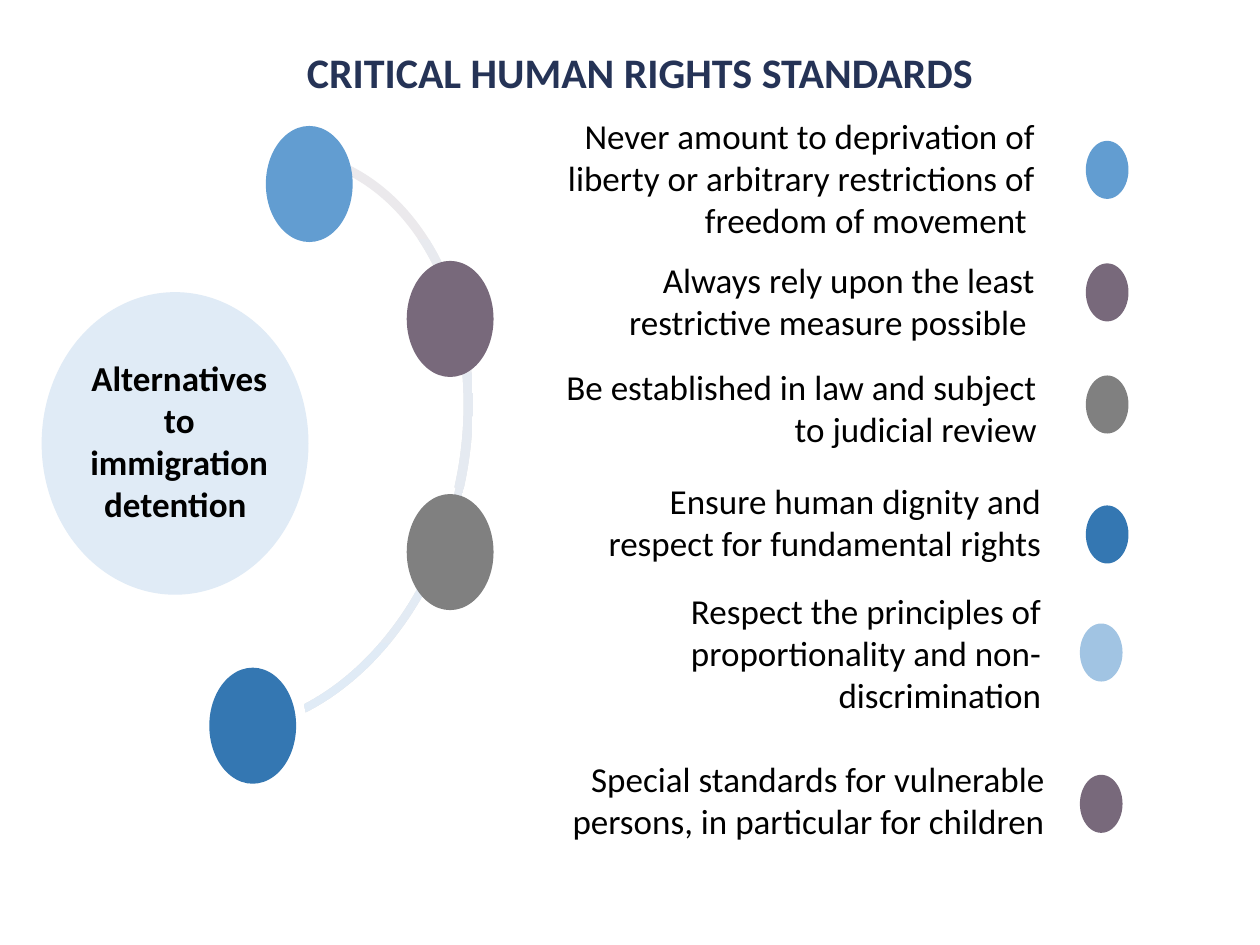
"""Build the slide on human rights standards for alternatives to detention."""
from pptx import Presentation
from pptx.dml.color import RGBColor
from pptx.enum.shapes import MSO_SHAPE
from pptx.enum.text import MSO_AUTO_SIZE, PP_ALIGN
from pptx.oxml.ns import qn
from pptx.util import Cm, Pt

SKY = RGBColor(0x62, 0x9D, 0xD1)
PLUM = RGBColor(0x78, 0x69, 0x7B)
GREY = RGBColor(0x80, 0x80, 0x80)
BLUE = RGBColor(0x34, 0x77, 0xB2)
PALE = RGBColor(0xA1, 0xC4, 0xE3)
ICE = RGBColor(0xE0, 0xEB, 0xF6)
MIST = RGBColor(0xEB, 0xE9, 0xEC)
NAVY = RGBColor(0x25, 0x33, 0x56)
BLACK = RGBColor(0, 0, 0)

BODY = {"name": "Calibri", "size": Pt(20), "bold": False}
STRONG = {**BODY, "bold": True}
TITLE = {**STRONG, "size": Pt(24)}

ARC = (-0.99, 4.42, 11.94, 8.94)
ARCS = [(108, 162, 0.021), (162, 201.12, 0.018)]
NODES = [(5.36, 2.54, SKY), (8.2, 5.26, PLUM), (8.2, 9.96, GREY), (4.22, 13.46, BLUE)]
RULES = [
    ("Never amount to deprivation of liberty or arbitrary restrictions of freedom of movement ",
     (11.05, 2.18, 10.06, 2.82), (21.89, 2.84), SKY),
    ("Always rely upon the least restrictive measure possible ",
     (10.52, 5.08, 10.59, 1.96), (21.89, 5.31), PLUM),
    ("Be established in law and subject to judicial review",
     (10.46, 7.24, 10.69, 1.96), (21.89, 7.57), GREY),
    ("Ensure human dignity and respect for fundamental rights",
     (11.33, 9.55, 9.91, 1.96), (21.89, 10.19), BLUE),
    ("Respect the principles of proportionality and non-discrimination",
     (11.33, 11.76, 9.91, 2.82), (21.77, 12.57), PALE),
    ("Special standards for vulnerable persons, in particular for children",
     (9.65, 15.14, 11.66, 1.96), (21.77, 15.62), PLUM),
]


class Page:
    """Hold the text style and the current slide."""

    def __init__(self, slide, style):
        self.slide = slide
        self.style = style

    def shape(self, kind, box):
        """Add a plain shape with neither line nor shadow."""
        item = self.slide.shapes.add_shape(kind, *map(Cm, box))
        item.shadow.inherit = False
        item.line.fill.background()
        return item

    def oval(self, box, color):
        """Add a filled ellipse."""
        fill = self.shape(MSO_SHAPE.OVAL, box).fill
        fill.solid()
        fill.fore_color.rgb = color

    def arc(self, box, turn, values):
        """Add a turned arc that fades from top to bottom."""
        item = self.shape(MSO_SHAPE.BLOCK_ARC, box)
        item.rotation = turn
        for spot, value in enumerate(values):
            item.adjustments[spot] = value
        item.fill.gradient()
        item.fill.gradient_angle = 270
        for stop, color, place in zip(item.fill.gradient_stops, (MIST, ICE), (0, 1)):
            stop.color.rgb = color
            stop.position = place
        item.element.spPr.find(qn("a:gradFill")).set("rotWithShape", "0")

    def text(self, words, box, align, color=BLACK, style=None):
        """Add a wrapped text box."""
        frame = self.slide.shapes.add_textbox(*map(Cm, box)).text_frame
        frame.word_wrap = True
        frame.auto_size = MSO_AUTO_SIZE.SHAPE_TO_FIT_TEXT
        para = frame.paragraphs[0]
        para.alignment = align
        run = para.add_run()
        run.text = words
        for key, value in (style or self.style).items():
            setattr(run.font, key, value)
        run.font.color.rgb = color


def main():
    """Draw the slide and save it."""
    deck = Presentation()
    deck.slide_width, deck.slide_height = Cm(25.4), Cm(19.05)
    page = Page(deck.slides.add_slide(deck.slide_layouts[6]), BODY)
    for values in ARCS:
        page.arc(ARC, 102.6, values)
    for left, top, color in NODES:
        page.oval((left, top, 1.75, 2.34), color)
    page.oval((0.84, 5.89, 5.38, 6.1), ICE)
    page.text("Alternatives to immigration detention ", (1.42, 7.06, 4.39, 3.68),
              PP_ALIGN.CENTER, style=STRONG)
    page.text(" CRITICAL HUMAN RIGHTS STANDARDS", (3.84, 0.81, 17.93, 1.27),
              PP_ALIGN.CENTER, NAVY, TITLE)
    for words, box, spot, color in RULES:
        page.text(words, box, PP_ALIGN.RIGHT)
        page.oval((*spot, 0.86, 1.17), color)
    deck.save("out.pptx")


if __name__ == "__main__":
    main()
